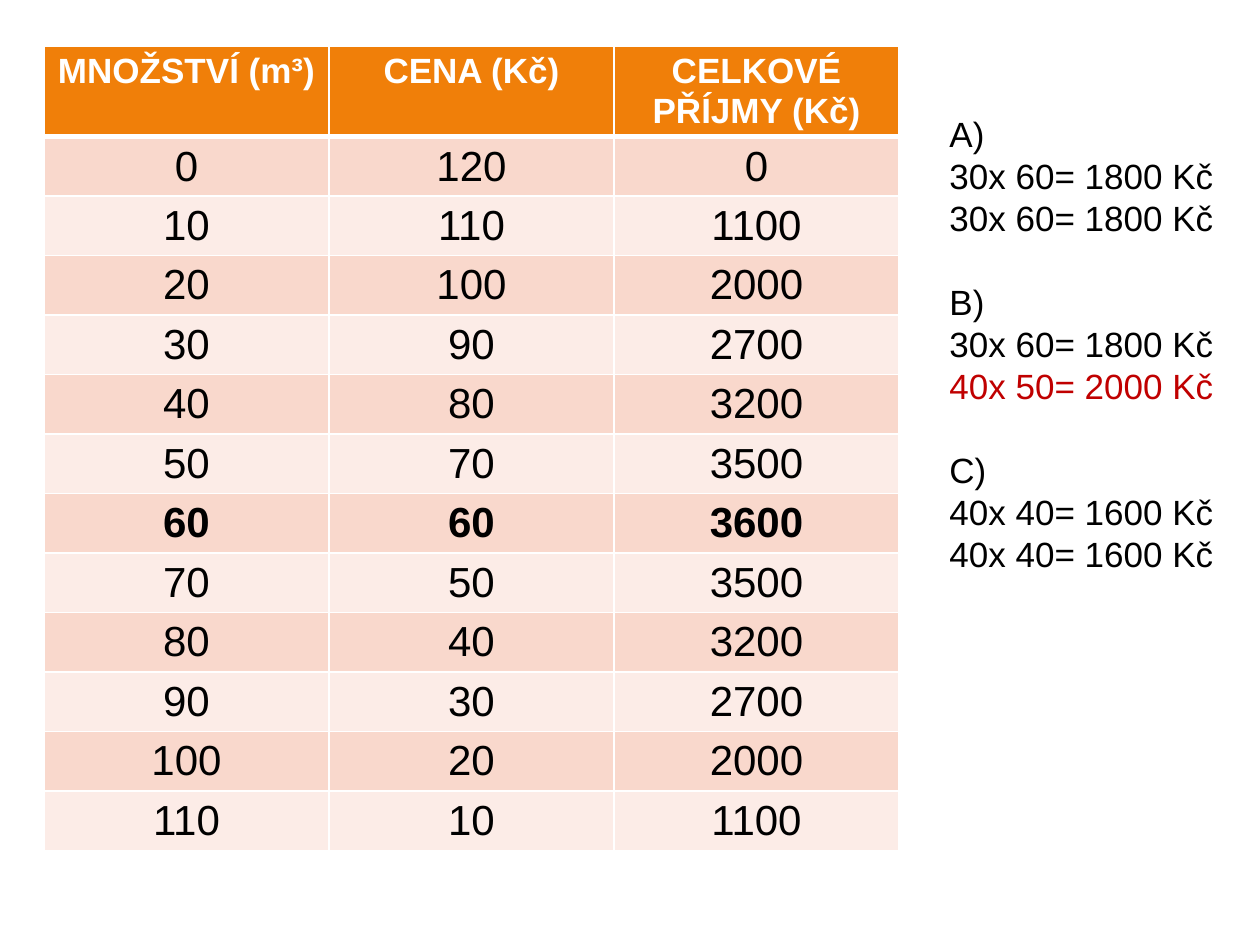
from dataclasses import dataclass

from lxml import etree
from pptx import Presentation
from pptx import util as u
from pptx.dml.color import RGBColor
from pptx.enum import text
from pptx.oxml import ns

PX = 914400 / 126

HEADINGS = ["MNOŽSTVÍ (m³)", "CENA (Kč)", "CELKOVÉ PŘÍJMY (Kč)"]
QUANTITIES = range(0, 120, 10)
ROWS = [[amount, 120 - amount, amount * (120 - amount)] for amount in QUANTITIES]
BEST_REVENUE = max(row[-1] for row in ROWS)

ANSWERS = [
    ("A)", ["30x 60= 1800 Kč", "30x 60= 1800 Kč"]),
    ("B)", ["30x 60= 1800 Kč", "40x 50= 2000 Kč"]),
    ("C)", ["40x 40= 1600 Kč", "40x 40= 1600 Kč"]),
]
BEST_ANSWER = "40x 50= 2000 Kč"


@dataclass(frozen=True)
class Theme:
    font: str = "Arial"
    ink: str = "000000"
    paper: str = "FFFFFF"
    accent: str = "C00000"
    header: str = "F07F09"
    bands: tuple = ("F9D8CC", "FCECE7")
    small: int = 20
    large: int = 24
    leading: int = 24
    rule: int = 1
    header_rule: int = 3


def px(length):
    return u.Emu(round(length * PX))


class Sheet:
    """Draws tables and text on one page in a single theme."""

    def __init__(self, page, theme):
        self.page = page
        self.theme = theme

    def style(self, para, size, color, bold=False):
        para.font.name = self.theme.font
        para.font.size = u.Pt(size)
        para.font.bold = bold
        para.font.color.rgb = RGBColor.from_string(color)

    def borders(self, cell, top, bottom):
        properties = cell._tc.get_or_add_tcPr()
        widths = {"L": self.theme.rule, "R": self.theme.rule, "T": top, "B": bottom}
        for index, (side, width) in enumerate(widths.items()):
            line = etree.Element(ns.qn(f"a:ln{side}"), w=str(u.Pt(width)))
            fill = etree.SubElement(line, ns.qn("a:solidFill"))
            etree.SubElement(fill, ns.qn("a:srgbClr"), val=self.theme.paper)
            properties.insert(index, line)

    def cell(self, cell, value, fill, size, color, bold):
        cell.fill.solid()
        cell.fill.fore_color.rgb = RGBColor.from_string(fill)
        para = cell.text_frame.paragraphs[0]
        para.text = str(value)
        para.alignment = text.PP_ALIGN.CENTER
        self.style(para, size, color, bold)

    def table(self, left, top, column_width, header_height, row_height):
        theme = self.theme
        height = header_height + row_height * len(ROWS)
        table = self.page.shapes.add_table(
            len(ROWS) + 1, len(HEADINGS), px(left), px(top),
            px(column_width * len(HEADINGS)), px(height),
        ).table
        for column in table.columns:
            column.width = px(column_width)
        for index, values in enumerate([HEADINGS] + ROWS):
            is_header = index == 0
            table.rows[index].height = px(header_height if is_header else row_height)
            if is_header:
                look = (theme.header, theme.small, theme.paper, True)
            else:
                band = theme.bands[(index - 1) % len(theme.bands)]
                look = (band, theme.large, theme.ink, values[-1] == BEST_REVENUE)
            for column, value in enumerate(values):
                cell = table.cell(index, column)
                self.cell(cell, value, *look)
                self.borders(
                    cell,
                    theme.header_rule if index == 1 else theme.rule,
                    theme.header_rule if is_header else theme.rule,
                )

    def answers(self, left, top, width, height):
        theme = self.theme
        box = self.page.shapes.add_textbox(px(left), px(top), px(width), px(height))
        frame = box.text_frame
        frame.word_wrap = True
        for group, (label, sums) in enumerate(ANSWERS):
            for row, line in enumerate([label] + sums):
                is_first = group == 0 and row == 0
                para = frame.paragraphs[0] if is_first else frame.add_paragraph()
                para.text = line
                para.line_spacing = u.Pt(theme.leading)
                if group and row == 0:
                    para.space_before = u.Pt(theme.leading)
                color = theme.accent if line == BEST_ANSWER else theme.ink
                self.style(para, theme.small, color)


def main():
    deck = Presentation()
    deck.slide_width = px(1260)
    deck.slide_height = px(945)
    page = deck.slides.add_slide(deck.slide_layouts[6])
    sheet = Sheet(page, Theme())
    sheet.table(left=44, top=46, column_width=285, header_height=82, row_height=53)
    sheet.answers(left=937, top=106, width=323, height=522)
    deck.save("out.pptx")


if __name__ == "__main__":
    main()
